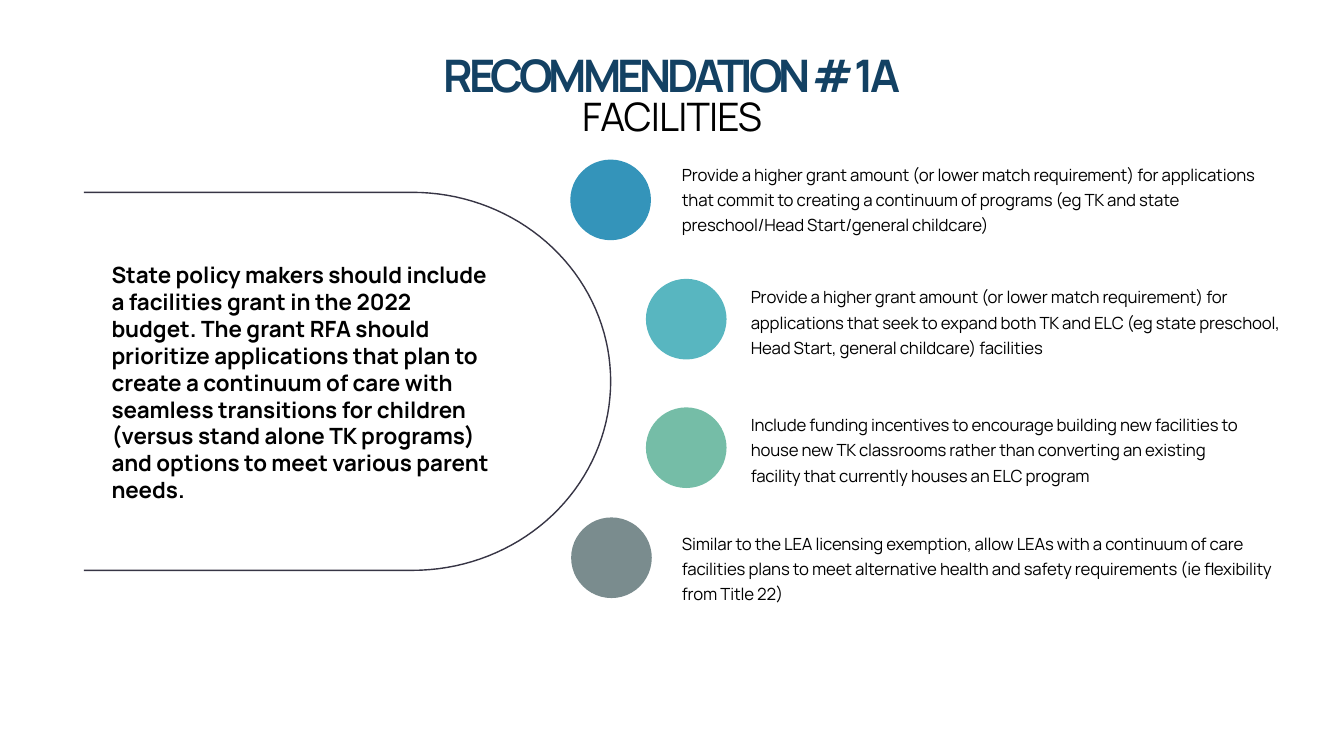
"""Build the Recommendation 1A facilities slide on a 16 by 9 grid of square cells."""
from dataclasses import dataclass
from math import cos, pi, sin

from pptx import Presentation
from pptx.dml.color import RGBColor
from pptx.enum.shapes import MSO_SHAPE
from pptx.enum.text import MSO_ANCHOR, MSO_AUTO_SIZE, PP_ALIGN
from pptx.util import Inches, Pt


@dataclass
class Theme:
    font: str = "Manrope"
    navy: str = "134163"
    black: str = "000000"
    outline: str = "373545"
    blue: str = "3494BA"
    teal: str = "58B6C0"
    green: str = "75BDA7"
    grey: str = "7A8C8E"
    title_size: int = 32
    subtitle_size: int = 28
    statement_size: int = 16
    point_size: int = 12


theme = Theme()
deck = Presentation()
cell = Inches(7.5) // 9
deck.slide_width, deck.slide_height = 16 * cell, 9 * cell
page = deck.slides.add_slide(deck.slide_layouts[5])


def grid(*cells):
    """Turn counts of grid cells into slide lengths."""
    return [round(count * cell) for count in cells]


def write(box, area, text, size, color=theme.black, bold=False, tracking=0,
          leading=None, align=PP_ALIGN.LEFT, anchor=MSO_ANCHOR.TOP, inset=(0.05, 0.05)):
    """Place a box on the grid and fill it with one formatted paragraph."""
    box.left, box.top, box.width, box.height = grid(*area)
    frame = box.text_frame
    frame.text = text
    frame.word_wrap = True
    frame.auto_size = MSO_AUTO_SIZE.NONE
    frame.vertical_anchor = anchor
    frame.margin_left = frame.margin_right = Inches(0.1)
    frame.margin_top, frame.margin_bottom = (Inches(side) for side in inset)
    para = frame.paragraphs[0]
    para.alignment = align
    if leading:
        para.line_spacing = Pt(leading)
    span = para.runs[0]
    span.font.name = theme.font
    span.font.size = Pt(size)
    span.font.bold = bold
    span.font.color.rgb = RGBColor.from_string(color)
    span._r.get_or_add_rPr().set("spc", str(round(tracking * 100)))


write(page.shapes.title, (1, -0.28, 14, 1.49), "RECOMMENDATION # 1A", theme.title_size,
      theme.navy, True, -2.9, 94, PP_ALIGN.CENTER, MSO_ANCHOR.BOTTOM, (0, 0))
write(page.shapes.add_textbox(0, 0, cell, cell), (1, 1.21, 14, 0.52), "FACILITIES",
      theme.subtitle_size, tracking=-0.6, leading=21, align=PP_ALIGN.CENTER, inset=(0.08, 0))

arc_x, arc_y, radius_x, radius_y, steps = 4.91, 4.54, 2.36, 2.25, 72
angles = [pi * step / steps - pi / 2 for step in range(steps + 1)]
arc = [grid(arc_x + radius_x * cos(angle), arc_y + radius_y * sin(angle)) for angle in angles]
builder = page.shapes.build_freeform(*grid(1, arc_y - radius_y))
builder.add_line_segments(arc + [grid(1, arc_y + radius_y)], close=False)
bracket = builder.convert_to_shape()
bracket.shadow.inherit = False
bracket.fill.background()
bracket.line.color.rgb = RGBColor.from_string(theme.outline)
bracket.line.width = Pt(1)

points = [
    (theme.blue, 6.79, 1.9, 8, 1.84, 7.4,
     "Provide a higher grant amount (or lower match requirement) for applications that commit "
     "to creating a continuum of programs (eg TK and state preschool/Head Start/general childcare)"),
    (theme.teal, 7.69, 3.32, 8.82, 3.3, 6.64,
     "Provide a higher grant amount (or lower match requirement) for applications that seek to "
     "expand both TK and ELC (eg state preschool, Head Start, general childcare) facilities"),
    (theme.green, 7.69, 4.85, 8.82, 4.82, 6.18,
     "Include funding incentives to encourage building new facilities to house new TK classrooms "
     "rather than converting an existing facility that currently houses an ELC program"),
    (theme.grey, 6.8, 6.16, 8, 6.23, 7.4,
     "Similar to the LEA licensing exemption, allow LEAs with a continuum of care facilities plans "
     "to meet alternative health and safety requirements (ie flexibility from Title 22)"),
]
for color, dot_x, dot_y, text_x, text_y, text_width, text in points:
    dot = page.shapes.add_shape(MSO_SHAPE.OVAL, *grid(dot_x, dot_y, 0.96, 0.96))
    dot.shadow.inherit = False
    dot.fill.solid()
    dot.fill.fore_color.rgb = RGBColor.from_string(color)
    dot.line.fill.background()
    write(page.shapes.add_textbox(0, 0, cell, cell), (text_x, text_y, text_width, 1.01),
          text, theme.point_size, tracking=-0.1, leading=18)

write(page.shapes.add_textbox(0, 0, cell, cell), (1.21, 3.04, 4.87, 3.02),
      "State policy makers should include a facilities grant in the 2022 budget. The grant RFA "
      "should prioritize applications that plan to create a continuum of care with seamless "
      "transitions for children (versus stand alone TK programs) and options to meet various "
      "parent needs.", theme.statement_size, bold=True, anchor=MSO_ANCHOR.MIDDLE)

deck.save("out.pptx")
